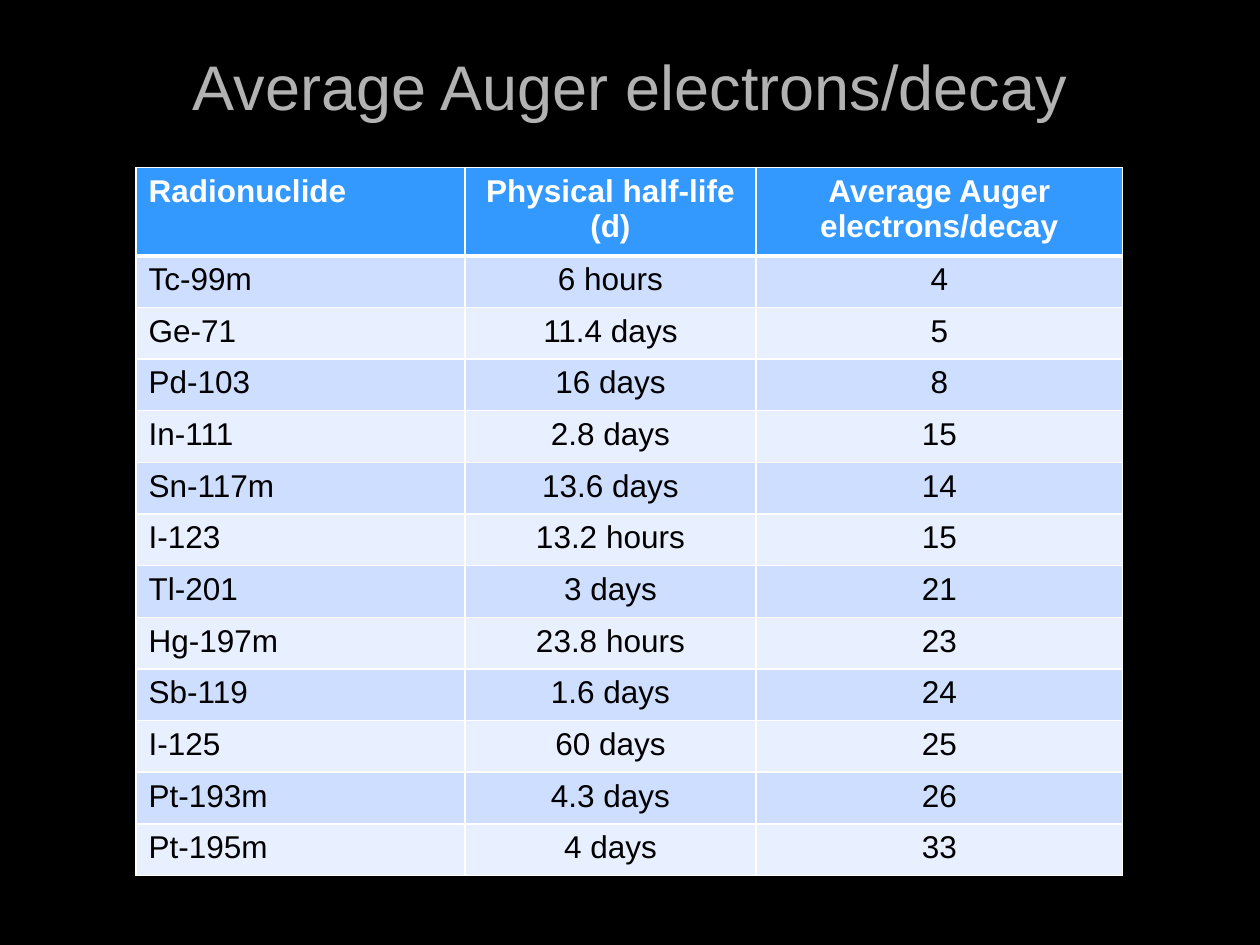
"""Build a slide with a table of Auger electron yields by radionuclide."""
from lxml import etree
from pptx import Presentation
from pptx import util as u
from pptx.dml.color import RGBColor
from pptx.enum import text
from pptx.oxml import ns

BLACK = RGBColor(0x00, 0x00, 0x00)
WHITE = RGBColor(0xFF, 0xFF, 0xFF)
GREY = RGBColor(0xB2, 0xB2, 0xB2)
BLUE = RGBColor(0x33, 0x99, 0xFF)
BANDS = (RGBColor(0xCE, 0xDE, 0xFF), RGBColor(0xE8, 0xEF, 0xFF))
FONT = "Arial"
WIDTHS = (2.61, 2.31, 2.91)
HEAD_H, ROW_H = 0.66, 0.41
ROWS = (
    ("Radionuclide", "Physical half-life (d)", "Average Auger electrons/decay"),
    ("Tc-99m", "6 hours", "4"),
    ("Ge-71", "11.4 days", "5"),
    ("Pd-103", "16 days", "8"),
    ("In-111", "2.8 days", "15"),
    ("Sn-117m", "13.6 days", "14"),
    ("I-123", "13.2 hours", "15"),
    ("Tl-201", "3 days", "21"),
    ("Hg-197m", "23.8 hours", "23"),
    ("Sb-119", "1.6 days", "24"),
    ("I-125", "60 days", "25"),
    ("Pt-193m", "4.3 days", "26"),
    ("Pt-195m", "4 days", "33"),
)


def write(frame, words, size, color, align, bold=False):
    """Put one styled run in the first paragraph of a text frame."""
    para = frame.paragraphs[0]
    para.alignment = align
    run = para.add_run()
    run.text = words
    font = run.font
    font.name, font.size, font.bold = FONT, u.Pt(size), bold
    font.color.rgb = color


def add_title(slide, words):
    """Add the centred title."""
    box = slide.shapes.add_textbox(
        u.Inches(0.5), u.Inches(0.05), u.Inches(9), u.Inches(1.25))
    frame = box.text_frame
    frame.word_wrap = True
    frame.vertical_anchor = text.MSO_ANCHOR.MIDDLE
    write(frame, words, 36, GREY, text.PP_ALIGN.CENTER)


def add_edge(cell, side, width):
    """Draw one white border of a cell."""
    props = cell._tc.get_or_add_tcPr()
    line = etree.SubElement(props, ns.qn(f"a:ln{side}"), w=str(u.Pt(width)))
    fill = etree.SubElement(line, ns.qn("a:solidFill"))
    etree.SubElement(fill, ns.qn("a:srgbClr"), val=str(WHITE))


def style_cell(cell, row, col, words):
    """Set the borders, fill and text of a cell by its place."""
    head = row == 0
    for side in "LRTB":
        thick = (row, side) in ((0, "B"), (1, "T"))
        add_edge(cell, side, 3 if thick else 1)
    cell.fill.solid()
    cell.fill.fore_color.rgb = BLUE if head else BANDS[(row - 1) % 2]
    align = text.PP_ALIGN.CENTER if col else text.PP_ALIGN.LEFT
    write(cell.text_frame, words, 18, WHITE if head else BLACK, align, head)


def add_grid(slide):
    """Add the table of radionuclides."""
    high = HEAD_H + ROW_H * (len(ROWS) - 1)
    grid = slide.shapes.add_table(
        len(ROWS), len(WIDTHS), u.Inches(1.08), u.Inches(1.33),
        u.Inches(sum(WIDTHS)), u.Inches(high)).table
    for col, width in zip(grid.columns, WIDTHS):
        col.width = u.Inches(width)
    for r, words in enumerate(ROWS):
        grid.rows[r].height = u.Inches(ROW_H if r else HEAD_H)
        for c, word in enumerate(words):
            style_cell(grid.cell(r, c), r, c, word)


def main():
    """Build and save the slide."""
    deck = Presentation()
    deck.slide_width, deck.slide_height = u.Inches(10), u.Inches(7.5)
    slide = deck.slides.add_slide(deck.slide_layouts[6])
    back = slide.background.fill
    back.solid()
    back.fore_color.rgb = BLACK
    add_title(slide, "Average Auger electrons/decay")
    add_grid(slide)
    deck.save("out.pptx")


if __name__ == "__main__":
    main()
